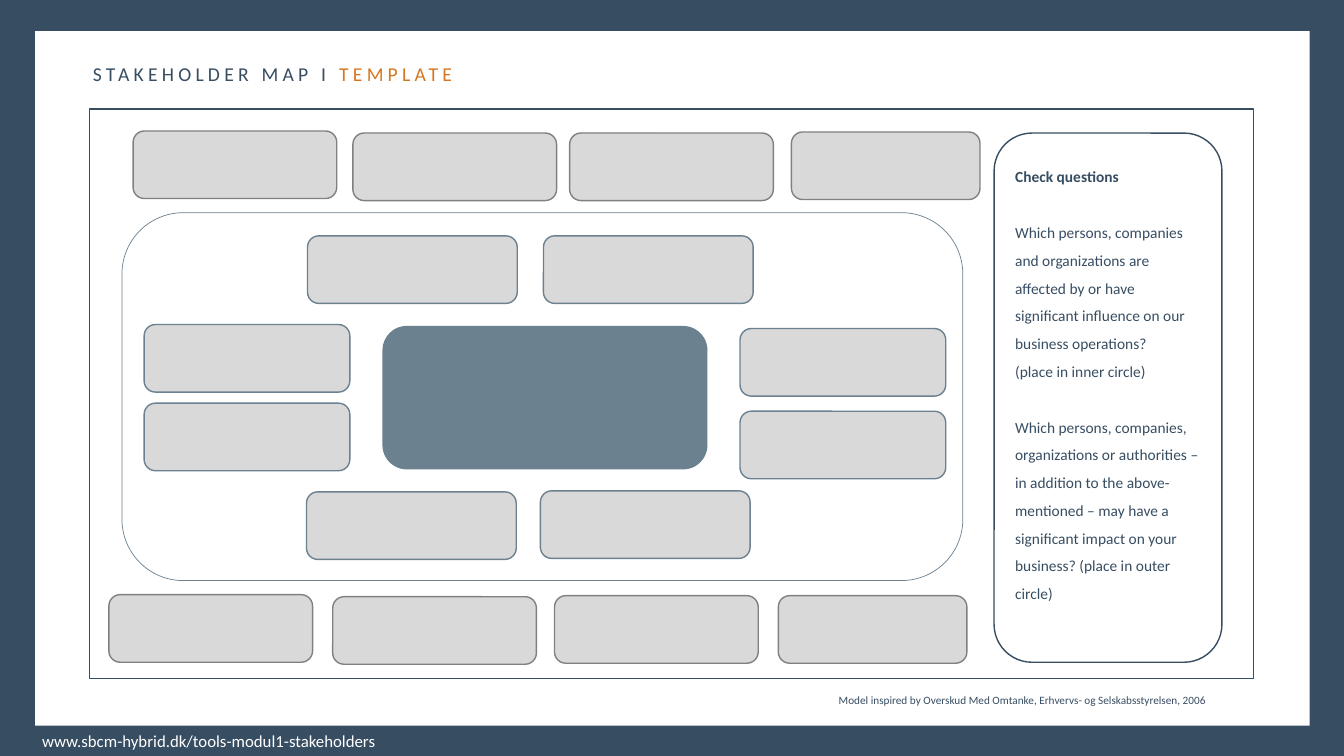
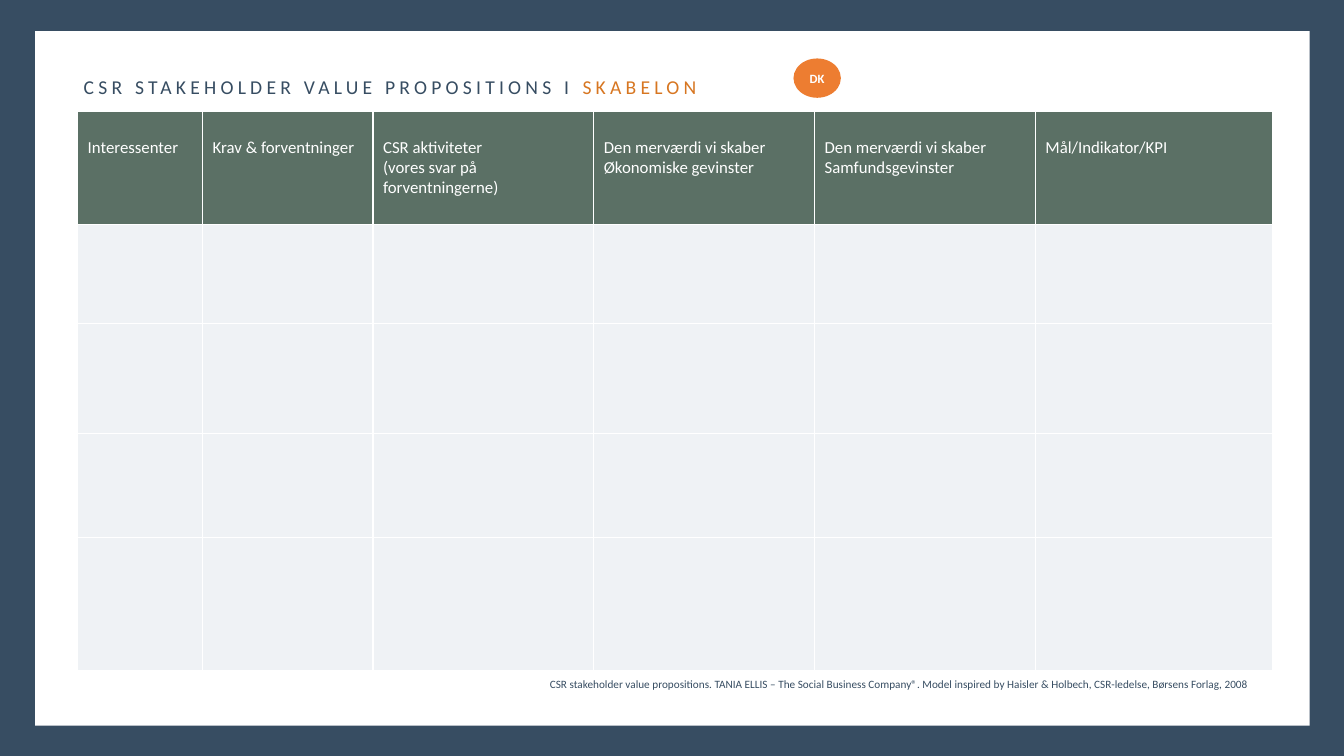
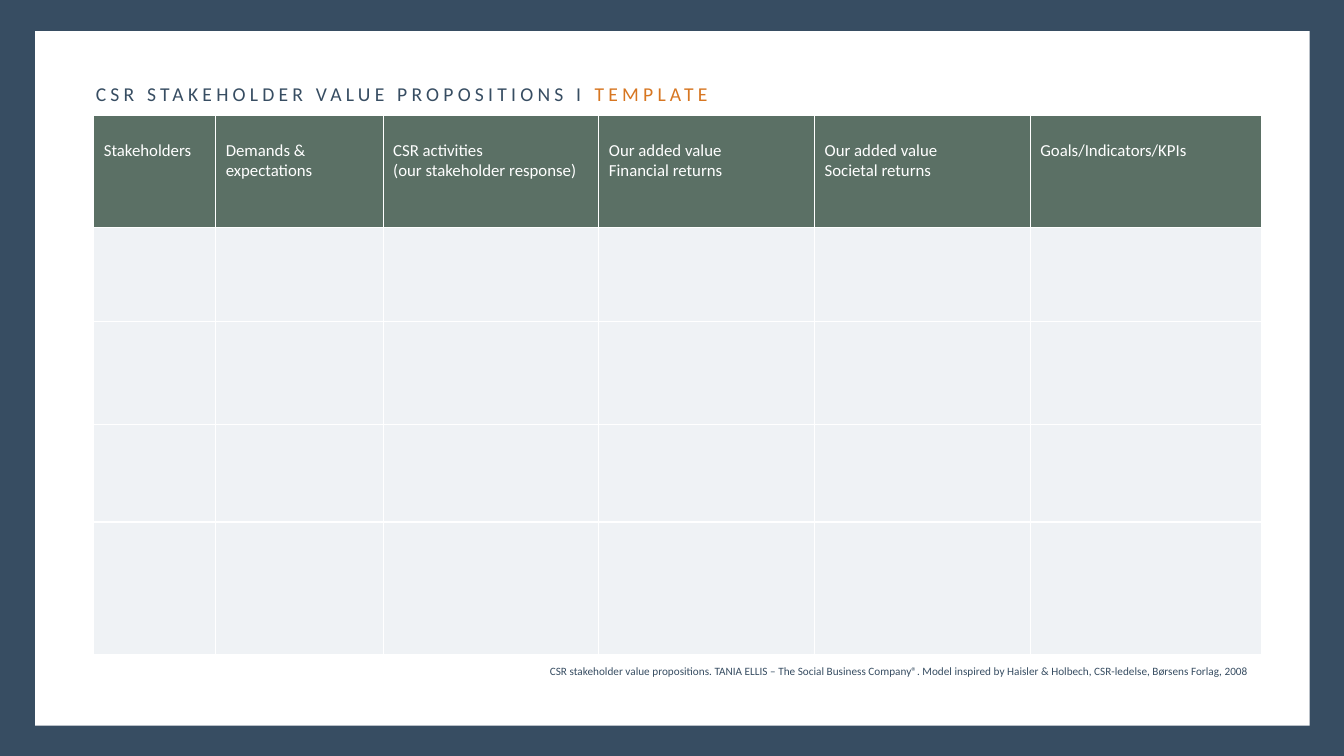
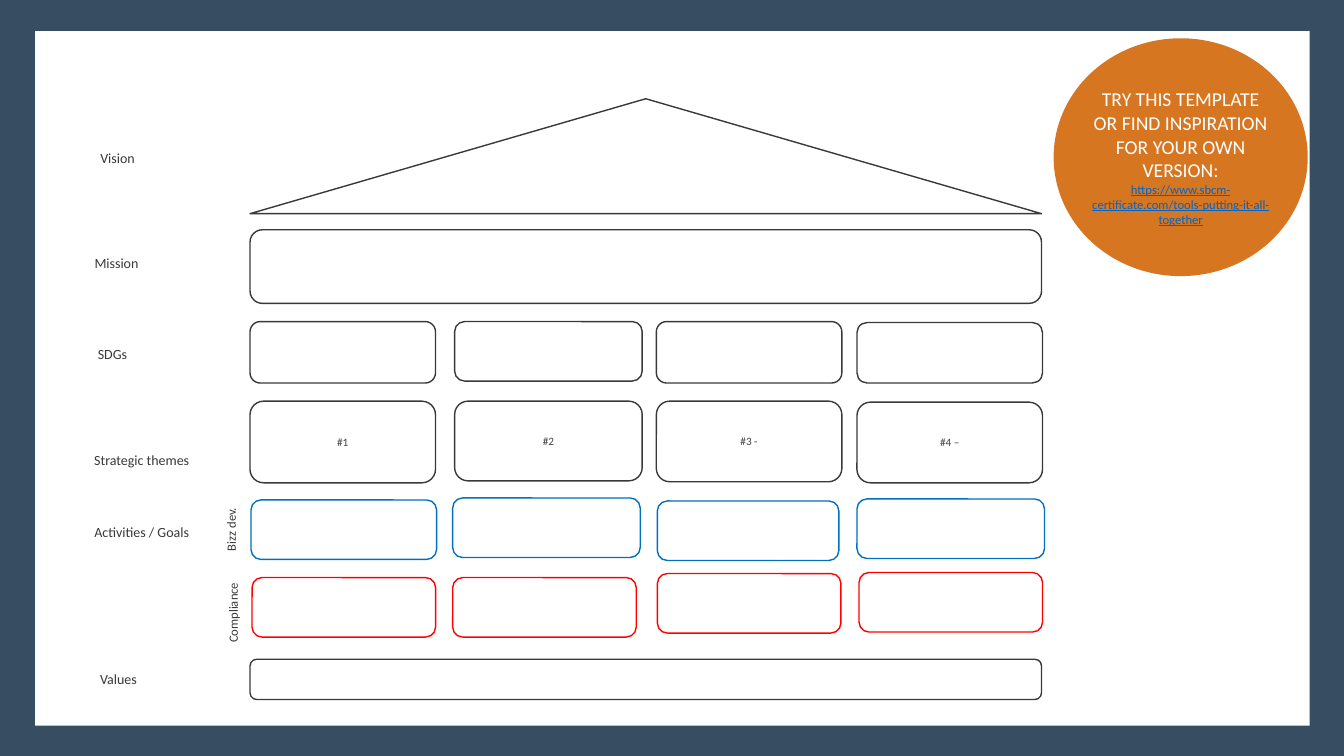
from pptx import Presentation
from pptx.dml.color import RGBColor
from pptx.enum.shapes import MSO_SHAPE as Kind
from pptx.enum.text import MSO_ANCHOR as Anchor, PP_ALIGN as Align
from pptx.oxml import parse_xml
from pptx.oxml.ns import nsdecls
from pptx.util import Inches, Pt

FONT = "Calibri"
HUES = {
    "navy": "374D62", "white": "FFFFFF", "orange": "D77621", "badge": "ED7D31",
    "slate": "6B8190", "grey": "D9D9D9", "edge": "808080", "green": "5B7065",
    "pale": "EFF2F5", "ink": "3B3838", "text": "404040", "link": "0563C1",
    "blue": "0070C0", "red": "FF0000",
}
RGB = {name: RGBColor.from_string(code) for name, code in HUES.items()}


def box(slide, at, kind=None, fill=None, line=None, width=1):
    """Add a preset shape, or a text box when no kind is given."""
    place = [Inches(n) for n in at]
    if kind is None:
        shape = slide.shapes.add_textbox(*place)
    else:
        shape = slide.shapes.add_shape(kind, *place)
        shape.shadow.inherit = False
        shape.text_frame.vertical_anchor = Anchor.MIDDLE
        if fill:
            shape.fill.solid()
            shape.fill.fore_color.rgb = RGB[fill]
        else:
            shape.fill.background()
        if line:
            shape.line.color.rgb = RGB[line]
            shape.line.width = Pt(width)
        else:
            shape.line.fill.background()
    shape.text_frame.word_wrap = True
    return shape


def say(para, text, size, hue, align=Align.LEFT, bold=False):
    """Add one run to a paragraph."""
    para.alignment = align
    run = para.add_run()
    run.text = text
    run.font.name = FONT
    run.font.size = Pt(size)
    run.font.bold = bold
    run.font.color.rgb = RGB[hue]
    return run


prs = Presentation()
prs.slide_width, prs.slide_height = Inches(13.33), Inches(7.5)
titled, blank = prs.slide_layouts[5], prs.slide_layouts[6]

# Slides and their two-colour titles
heads = [
    ("STAKEHOLDER MAP I ", "TEMPLATE", 0.82, 0.56),
    ("CSR STAKEHOLDER VALUE PROPOSITIONS I ", "SKABELON", 0.73, 0.69),
    ("CSR STAKEHOLDER VALUE PROPOSITIONS I ", "TEMPLATE", 0.85, 0.76),
]
pages = []
for lead, tail, x, y in heads:
    page = prs.slides.add_slide(titled)
    title = page.shapes.title
    title.left, title.top = Inches(x), Inches(y)
    title.width, title.height = Inches(11.11), Inches(0.34)
    title.text_frame.vertical_anchor = Anchor.TOP
    for text, hue in ((lead, "navy"), (tail, "orange")):
        run = say(title.text_frame.paragraphs[0], text, 14, hue)
        run.font._element.set("spc", "300")
    pages.append(page)
first, danish, english = pages
house = prs.slides.add_slide(blank)

# Shared frame: navy background and white panel, kept on the master
master = prs.slide_master
master.background.fill.solid()
master.background.fill.fore_color.rgb = RGB["navy"]
panel = box(first, (0.35, 0.31, 12.64, 6.89), Kind.RECTANGLE, "white")
master.shapes.element.insert(2, panel._element)

# Slide 1: stakeholder map
box(first, (0.89, 1.08, 11.54, 5.65), Kind.RECTANGLE, None, "navy")
box(first, (1.21, 2.11, 8.34, 3.65), Kind.ROUNDED_RECTANGLE, None, "slate", 0.5)
box(first, (3.8, 3.24, 3.21, 1.41), Kind.ROUNDED_RECTANGLE, "slate", "slate")

inner = [
    (3.05, 2.34, 2.08), (5.39, 2.34, 2.08),
    (1.43, 3.22, 2.04), (1.43, 4, 2.04),
    (7.34, 3.26, 2.04), (7.34, 4.08, 2.04),
    (3.04, 4.88, 2.08), (5.36, 4.87, 2.08),
]
outer = [
    (1.32, 1.3, 2.02), (3.5, 1.32, 2.02), (5.65, 1.32, 2.02), (7.85, 1.31, 1.87),
    (1.08, 5.9, 2.02), (3.3, 5.92, 2.02), (5.5, 5.91, 2.02), (7.72, 5.91, 1.87),
]
for ring, edge in ((inner, "slate"), (outer, "edge")):
    for x, y, w in ring:
        box(first, (x, y, w, 0.67), Kind.ROUNDED_RECTANGLE, "grey", edge)

# Check questions: text, bold, space before
checks = [
    ("Check questions", True, 0),
    ("Which persons, companies and organizations are affected by or have "
     "significant influence on our business operations?", False, 20),
    ("(place in inner circle)", False, 0),
    ("Which persons, companies, organizations or authorities – in addition to "
     "the above-mentioned – may have a significant impact on your business? "
     "(place in outer circle)", False, 20),
]
frame = box(first, (9.86, 1.32, 2.26, 5.25), Kind.ROUNDED_RECTANGLE,
            None, "navy").text_frame
frame.vertical_anchor = Anchor.TOP
frame.margin_top = Inches(0.14)
for i, (text, bold, gap) in enumerate(checks):
    para = frame.add_paragraph() if i else frame.paragraphs[0]
    para.line_spacing = 1.5
    para.space_before = Pt(gap)
    say(para, text, 11, "navy", bold=bold)

# Source notes and web address
credit = ("CSR stakeholder value propositions. TANIA ELLIS – The Social Business "
          "Company®. Model inspired by Haisler & Holbech, CSR-ledelse, "
          "Børsens Forlag, 2008")
notes = [
    (first, (8.22, 6.83, 4.41, 0.24), 8, "navy", Align.LEFT,
     "Model inspired by Overskud Med Omtanke, Erhvervs- og Selskabsstyrelsen, 2006"),
    (first, (0.32, 7.2, 6.67, 0.3), 12, "white", Align.LEFT,
     "www.sbcm-hybrid.dk/tools-modul1-stakeholders"),
    (danish, (3.33, 6.67, 9.16, 0.24), 8, "navy", Align.RIGHT, credit),
    (english, (3.33, 6.54, 9.16, 0.24), 8, "navy", Align.RIGHT, credit),
]
for page, at, size, hue, align, text in notes:
    say(box(page, at).text_frame.paragraphs[0], text, size, hue, align)

# Slides 2 and 3: value proposition tables
grids = [
    (danish, 0.77, 1.11, [1.24, 1.69, 2.19, 2.19, 2.19, 2.35],
     [1.12, 0.98, 1.09, 1.03, 1.32],
     [["Interessenter"], ["Krav & forventninger"],
      ["CSR aktiviteter", "(vores svar på forventningerne)"],
      ["Den merværdi vi skaber", "Økonomiske gevinster"],
      ["Den merværdi vi skaber", "Samfundsgevinster"],
      ["Mål/Indikator/KPI"]]),
    (english, 0.93, 1.14, [1.21, 1.66, 2.14, 2.14, 2.14, 2.29],
     [1.12, 0.93, 1.02, 0.97, 1.32],
     [["Stakeholders"], ["Demands & expectations"],
      ["CSR activities", "(our stakeholder response)"],
      ["Our added value", "Financial returns"],
      ["Our added value", "Societal returns"],
      ["Goals/Indicators/KPIs"]]),
]
for page, x, y, cols, rows, labels in grids:
    table = page.shapes.add_table(
        len(rows), len(cols), Inches(x), Inches(y),
        Inches(sum(cols)), Inches(sum(rows))).table
    table.horz_banding = False
    for col, w in zip(table.columns, cols):
        col.width = Inches(w)
    for r, h in enumerate(rows):
        table.rows[r].height = Inches(h)
        for c, lines in enumerate(labels):
            cell = table.cell(r, c)
            props = cell._tc.get_or_add_tcPr()
            for side in "LRTB":
                props.append(parse_xml(
                    f'<a:ln{side} {nsdecls("a")} w="12700"><a:solidFill>'
                    f'<a:srgbClr val="{HUES["white"]}"/></a:solidFill></a:ln{side}>'))
            cell.fill.solid()
            cell.fill.fore_color.rgb = RGB["pale" if r else "green"]
            if r:
                continue
            cell.margin_top = Inches(0.25)
            for i, text in enumerate(lines):
                frame = cell.text_frame
                para = frame.add_paragraph() if i else frame.paragraphs[0]
                say(para, text, 12, "white")

# Language badge
frame = box(danish, (7.87, 0.58, 0.47, 0.39), Kind.OVAL, "badge").text_frame
frame.margin_left = frame.margin_right = frame.margin_top = frame.margin_bottom = 0
say(frame.paragraphs[0], "DK", 9, "white", Align.CENTER, True)

# Slide 4: strategy house, roof and full-width floors
box(house, (2.48, 0.98, 7.85, 1.14), Kind.ISOSCELES_TRIANGLE, None, "ink")
for y, h in ((2.28, 0.73), (6.54, 0.4)):
    box(house, (2.48, y, 7.85, h), Kind.ROUNDED_RECTANGLE, None, "ink")

# Four rooms on each floor: left, top, width, height
floors = [
    ("ink", [(2.48, 3.19, 1.84, 0.61), (4.51, 3.19, 1.86, 0.59),
             (6.51, 3.19, 1.84, 0.61), (8.5, 3.2, 1.84, 0.6)], []),
    ("ink", [(2.48, 3.98, 1.84, 0.81), (4.51, 3.98, 1.86, 0.79),
             (6.51, 3.98, 1.84, 0.8), (8.5, 3.99, 1.84, 0.8)],
     ["#1", "#2", "#3 -", "#4 –"]),
    ("blue", [(2.49, 4.96, 1.84, 0.59), (4.49, 4.94, 1.86, 0.59),
              (6.52, 4.97, 1.8, 0.59), (8.5, 4.95, 1.86, 0.59)], []),
    ("red", [(2.5, 5.73, 1.82, 0.59), (4.49, 5.73, 1.82, 0.59),
             (6.52, 5.69, 1.82, 0.59), (8.52, 5.68, 1.82, 0.59)], []),
]
for edge, rooms, names in floors:
    shapes = [box(house, at, Kind.ROUNDED_RECTANGLE, None, edge) for at in rooms]
    for shape, name in zip(shapes, names):
        say(shape.text_frame.paragraphs[0], name, 8, "text", Align.CENTER)

# Floor labels
labels = [
    ("Vision", 0.34, 1.31), ("Mission", 0.33, 2.35), ("SDGs", 0.29, 3.26),
    ("Strategic themes", 0.58, 4.31), ("Activities / Goals", 0.58, 5.02),
    ("Values", 0.35, 6.48),
]
for text, x, y in labels:
    frame = box(house, (x, y, 1.65, 0.51)).text_frame
    frame.vertical_anchor = Anchor.MIDDLE
    say(frame.paragraphs[0], text, 10, "ink", Align.CENTER)
for text, x, y in (("Bizz dev.", 1.67, 4.82), ("Compliance", 1.69, 5.73)):
    label = box(house, (x, y, 1.24, 0.25))
    label.rotation = 270
    say(label.text_frame.paragraphs[0], text, 9, "ink")

# Call to action
frame = box(house, (10.45, 0.38, 2.52, 2.36), Kind.OVAL, "orange").text_frame
frame.margin_left = frame.margin_right = frame.margin_top = frame.margin_bottom = 0
say(frame.paragraphs[0], "TRY THIS TEMPLATE OR FIND INSPIRATION FOR YOUR OWN VERSION:",
    14, "white", Align.CENTER)
link = say(frame.add_paragraph(),
           "https://www.sbcm-certificate.com/tools-putting-it-all-together",
           9, "link", Align.CENTER)
link.font.underline = True

prs.save("out.pptx")
